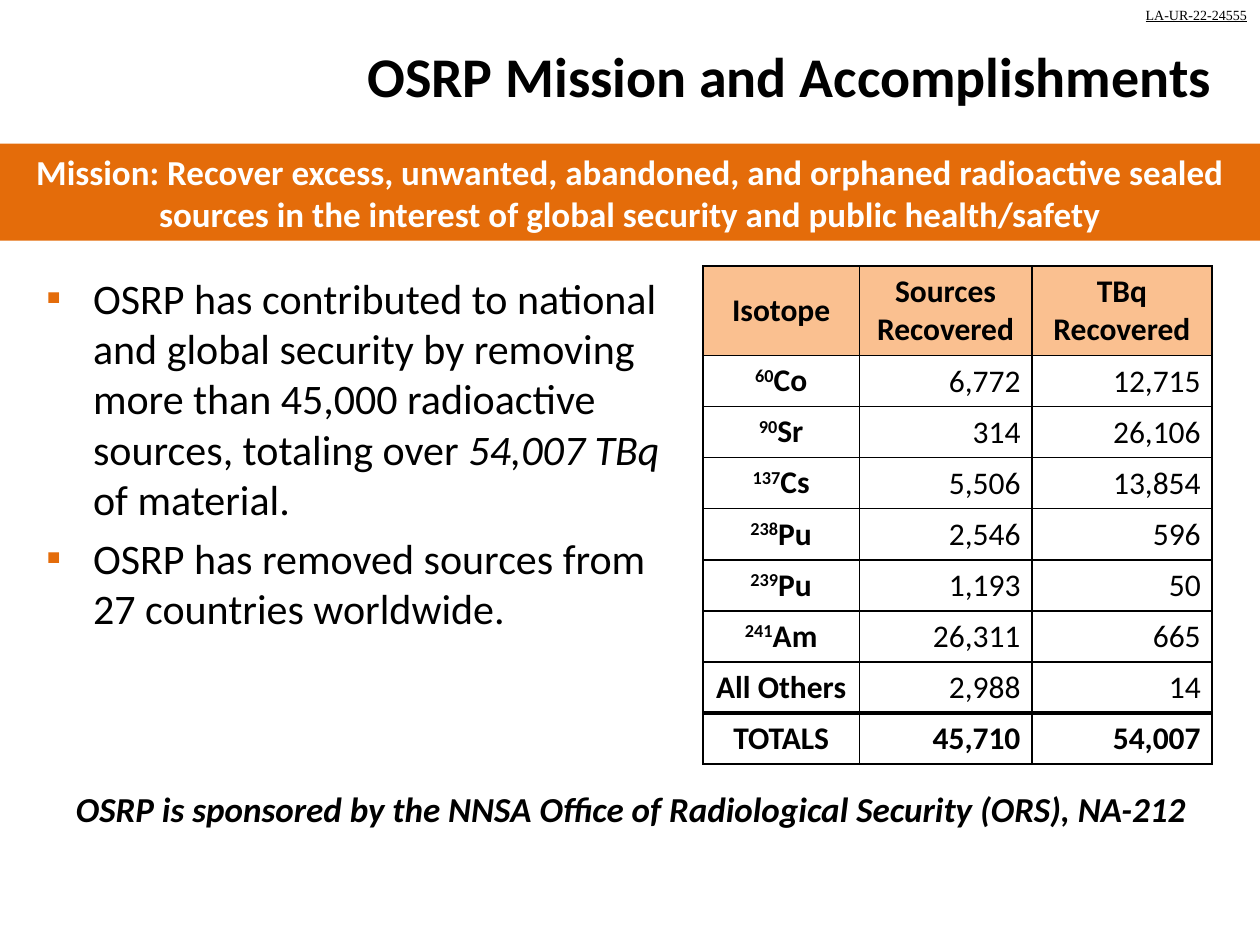
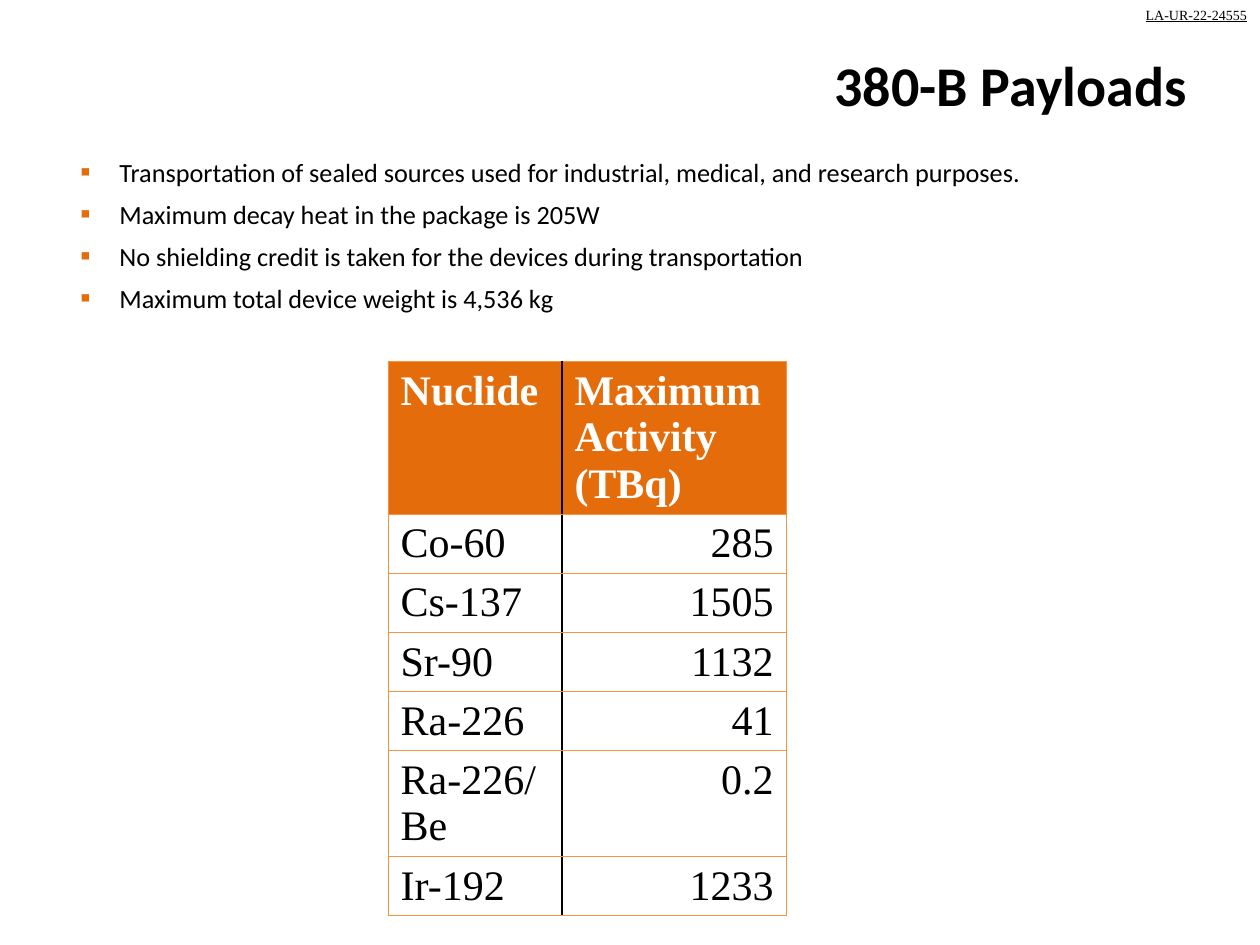
from dataclasses import dataclass

from lxml.etree import SubElement
from pptx import Presentation
from pptx.dml.color import RGBColor
from pptx.enum.shapes import MSO_SHAPE
from pptx.enum.text import MSO_ANCHOR, MSO_AUTO_SIZE, PP_ALIGN
from pptx.oxml.ns import qn
from pptx.util import Inches, Pt


@dataclass(frozen=True)
class Theme:
    """Colours, fonts and type sizes shared by the slides."""
    ink: str = "000000"
    paper: str = "FFFFFF"
    accent: str = "E46C0A"
    rule: str = "F69240"
    heading_tint: str = "FAC090"
    sans: str = "Calibri"
    serif: str = "Times New Roman"
    title: int = 32
    large: int = 24
    statement: int = 20
    cell: int = 18
    small: int = 15
    mark: int = 8


THEME = Theme()
COLUMNS, ROWS = 100, 75
UNIT = Inches(0.1)
TITLE_ONLY = 5
REPORT_NUMBER = "LA-UR-22-24555"
CELL_INSETS = (1, 0.5, 1, 0.5)
NUMBER_INSETS = (0.1, 0.1, 0.9, 0)

ISOTOPE_HEADINGS = ["Isotope", "Sources Recovered", "TBq Recovered"]
RECOVERIES = [
    (("60", "Co"), "6,772", "12,715"),
    (("90", "Sr"), "314", "26,106"),
    (("137", "Cs"), "5,506", "13,854"),
    (("238", "Pu"), "2,546", "596"),
    (("239", "Pu"), "1,193", "50"),
    (("241", "Am"), "26,311", "665"),
    (("", "All Others"), "2,988", "14"),
    (("", "TOTALS"), "45,710", "54,007"),
]
PAYLOAD_HEADINGS = ["Nuclide", "Maximum Activity (TBq)"]
PAYLOAD_LIMITS = [
    ("Co-60", "285"),
    ("Cs-137", "1505"),
    ("Sr-90", "1132"),
    ("Ra-226", "41"),
    ("Ra-226/Be", "0.2"),
    ("Ir-192", "1233"),
]


def grid(*counts):
    """Turn counts of grid columns or rows into lengths."""
    return [round(count * UNIT) for count in counts]


def apply_format(target, values):
    """Set each named attribute of the target."""
    for name, value in values.items():
        setattr(target, name, value)


def write(paragraph, text, size, color=THEME.ink, font=THEME.sans, raised=False, **style):
    """Add one formatted run to a paragraph."""
    run = paragraph.add_run()
    run.text = text
    apply_format(run.font, {"name": font, "size": Pt(size), **style})
    run.font.color.rgb = RGBColor.from_string(color)
    if raised:
        run.font._element.set("baseline", "30000")


def set_frame(frame, wrap=True):
    """Give a text frame the common top-anchored setting."""
    apply_format(frame, {"word_wrap": wrap, "auto_size": MSO_AUTO_SIZE.NONE,
                         "vertical_anchor": MSO_ANCHOR.TOP})


def add_text(slide, place, text, size, wrap=True, **style):
    """Add a centred line of text."""
    frame = slide.shapes.add_textbox(*grid(*place)).text_frame
    set_frame(frame, wrap)
    frame.paragraphs[0].alignment = PP_ALIGN.CENTER
    write(frame.paragraphs[0], text, size, **style)


def start_slide(deck, title, place):
    """Add a slide with its right-aligned title and report number."""
    slide = deck.slides.add_slide(deck.slide_layouts[TITLE_ONLY])
    heading = slide.shapes.title
    apply_format(heading, dict(zip(("left", "top", "width", "height"), grid(*place))))
    set_frame(heading.text_frame)
    paragraph = heading.text_frame.paragraphs[0]
    paragraph.alignment = PP_ALIGN.RIGHT
    write(paragraph, title, THEME.title, bold=True)
    add_text(slide, (89.9, 0, 10.1, 2.4), REPORT_NUMBER, THEME.mark, wrap=False,
             font=THEME.serif, underline=True)
    return slide


def add_band(slide, top, height, statement):
    """Add a full-width coloured band with a statement."""
    band = slide.shapes.add_shape(MSO_SHAPE.RECTANGLE, *grid(0, top, COLUMNS, height))
    band.shadow.inherit = False
    band.fill.solid()
    band.fill.fore_color.rgb = RGBColor.from_string(THEME.accent)
    band.line.fill.background()
    set_frame(band.text_frame)
    band.text_frame.vertical_anchor = MSO_ANCHOR.MIDDLE
    paragraph = band.text_frame.paragraphs[0]
    paragraph.alignment = PP_ALIGN.CENTER
    write(paragraph, statement, THEME.statement, THEME.paper, bold=True)


def set_bullet(paragraph, margin, hang, percent):
    """Give a paragraph a hanging square bullet."""
    properties = paragraph._p.get_or_add_pPr()
    margin, hang = grid(margin, hang)
    properties.set("marL", str(margin))
    properties.set("indent", str(-hang))
    color = SubElement(properties, qn("a:buClr"))
    SubElement(color, qn("a:srgbClr"), val=THEME.accent)
    SubElement(properties, qn("a:buSzPct"), val=str(percent * 1000))
    SubElement(properties, qn("a:buFont"), typeface=THEME.sans)
    SubElement(properties, qn("a:buChar"), char="▪")


def add_bullets(slide, place, points, size, gap, margin, hang, percent=100):
    """Add a bulleted list; each point is a list of (text, style) parts."""
    frame = slide.shapes.add_textbox(*grid(*place)).text_frame
    set_frame(frame)
    for index, parts in enumerate(points):
        paragraph = frame.add_paragraph() if index else frame.paragraphs[0]
        set_bullet(paragraph, margin, hang, percent)
        paragraph.space_before = Pt(gap if index else 0)
        for text, style in parts:
            write(paragraph, text, size, **style)


def set_borders(cell, **sides):
    """Draw the L, R, T and B borders of a cell as (colour, points)."""
    properties = cell._tc.get_or_add_tcPr()
    for side in "LRTB":
        color, points = sides[side]
        line = SubElement(properties, qn(f"a:ln{side}"), w=str(Pt(points)))
        fill = SubElement(line, qn("a:solidFill"))
        SubElement(fill, qn("a:srgbClr"), val=color)


def add_grid_table(slide, left, top, widths, heights):
    """Add an unstyled table with the given columns and rows."""
    table = slide.shapes.add_table(len(heights), len(widths), *grid(
        left, top, sum(widths), sum(heights))).table
    apply_format(table, {"first_row": False, "horz_banding": False})
    for column, width in zip(table.columns, grid(*widths)):
        column.width = width
    for row, height in zip(table.rows, grid(*heights)):
        row.height = height
    return table


def fill_cell(cell, parts, size, align, borders, fill=None, insets=CELL_INSETS,
              anchor=MSO_ANCHOR.MIDDLE):
    """Write, border and fill one cell; parts are (text, style) pairs."""
    names = ("margin_left", "margin_top", "margin_right", "margin_bottom")
    apply_format(cell, {**dict(zip(names, grid(*insets))), "vertical_anchor": anchor})
    set_borders(cell, **borders)
    if fill:
        cell.fill.solid()
        cell.fill.fore_color.rgb = RGBColor.from_string(fill)
    else:
        cell.fill.background()
    paragraph = cell.text_frame.paragraphs[0]
    paragraph.alignment = align
    for text, style in parts:
        write(paragraph, text, size, **style)


def add_recoveries(slide):
    """Add the table of recovered sources by isotope."""
    table = add_grid_table(slide, 55.8, 21.1, (12.4, 13.7, 14.3),
                           [7] + [4] * len(RECOVERIES))
    thin, thick = (THEME.ink, 1), (THEME.ink, 2.25)
    frame = {side: thin for side in "LRTB"}
    for column, heading in enumerate(ISOTOPE_HEADINGS):
        fill_cell(table.cell(0, column), [(heading, {"bold": True})], THEME.cell,
                  PP_ALIGN.CENTER, frame, THEME.heading_tint)
    totals = len(RECOVERIES)
    for row, ((mass, name), *amounts) in enumerate(RECOVERIES, 1):
        borders = {**frame, "T": thick if row == totals else thin,
                   "B": thick if row == totals - 1 else thin}
        label = [(name, {"bold": True})]
        if mass:
            label.insert(0, (mass, {"bold": True, "raised": True}))
        fill_cell(table.cell(row, 0), label, THEME.cell, PP_ALIGN.CENTER, borders)
        for column, amount in enumerate(amounts, 1):
            fill_cell(table.cell(row, column), [(amount, {"bold": row == totals})],
                      THEME.cell, PP_ALIGN.RIGHT, borders, insets=NUMBER_INSETS)


def add_payload_limits(slide):
    """Add the table of maximum activity by nuclide."""
    table = add_grid_table(slide, 30.8, 28.7, (13.8, 17.8),
                           [12.1] + [8.4 if "/" in nuclide else 4.7
                                     for nuclide, _ in PAYLOAD_LIMITS])
    edge, divider = (THEME.rule, 0.75), (THEME.ink, 1)
    for row, values in enumerate([PAYLOAD_HEADINGS, *PAYLOAD_LIMITS]):
        heading = row == 0
        style = {"font": THEME.serif, "bold": heading,
                 "color": THEME.paper if heading else THEME.ink}
        for column, value in enumerate(values):
            borders = {"L": divider if column else edge,
                       "R": edge if column else divider, "T": edge, "B": edge}
            fill_cell(table.cell(row, column), [(value, style)], THEME.large,
                      PP_ALIGN.RIGHT if column and not heading else PP_ALIGN.LEFT,
                      borders, THEME.accent if heading else None,
                      anchor=MSO_ANCHOR.TOP)


def build_mission(deck):
    """Build the slide on mission and accomplishments."""
    slide = start_slide(deck, "OSRP Mission and Accomplishments", (23.6, 2.8, 73.6, 5.4))
    add_bullets(slide, (2.7, 21.1, 51.9, 30.7), [
        [("OSRP has contributed to national and global security by removing more than "
          "45,000 radioactive sources, totaling over ", {}),
         ("54,007 TBq", {"italic": True}), (" of material.", {})],
        [("OSRP has removed sources from 27 countries worldwide.", {})],
    ], THEME.large, gap=4.8, margin=3.7, hang=3.7)
    add_band(slide, 11.4, 7.7,
             "Mission: Recover excess, unwanted, abandoned, and orphaned radioactive sealed "
             "sources in the interest of global security and public health/safety")
    add_recoveries(slide)
    add_text(slide, (0.2, 62, 99.8, 4.4),
             "OSRP is sponsored by the NNSA Office of Radiological Security (ORS), NA-212",
             THEME.statement, bold=True, italic=True)


def build_payloads(deck):
    """Build the slide on payload limits."""
    slide = start_slide(deck, "380-B Payloads", (29.6, 3.5, 65.6, 5.4))
    points = [
        "Transportation of sealed sources used for industrial, medical, and research purposes.",
        "Maximum decay heat in the package is 205W",
        "No shielding credit is taken for the devices during transportation",
        "Maximum total device weight is 4,536 kg",
    ]
    add_bullets(slide, (4.7, 11.9, 94.4, 21.5), [[(point, {})] for point in points],
                THEME.small, gap=6, margin=3.8, hang=3.1, percent=110)
    add_payload_limits(slide)


def main():
    """Build and save the deck."""
    deck = Presentation()
    deck.slide_width, deck.slide_height = grid(COLUMNS, ROWS)
    build_mission(deck)
    build_payloads(deck)
    deck.save("out.pptx")


if __name__ == "__main__":
    main()
